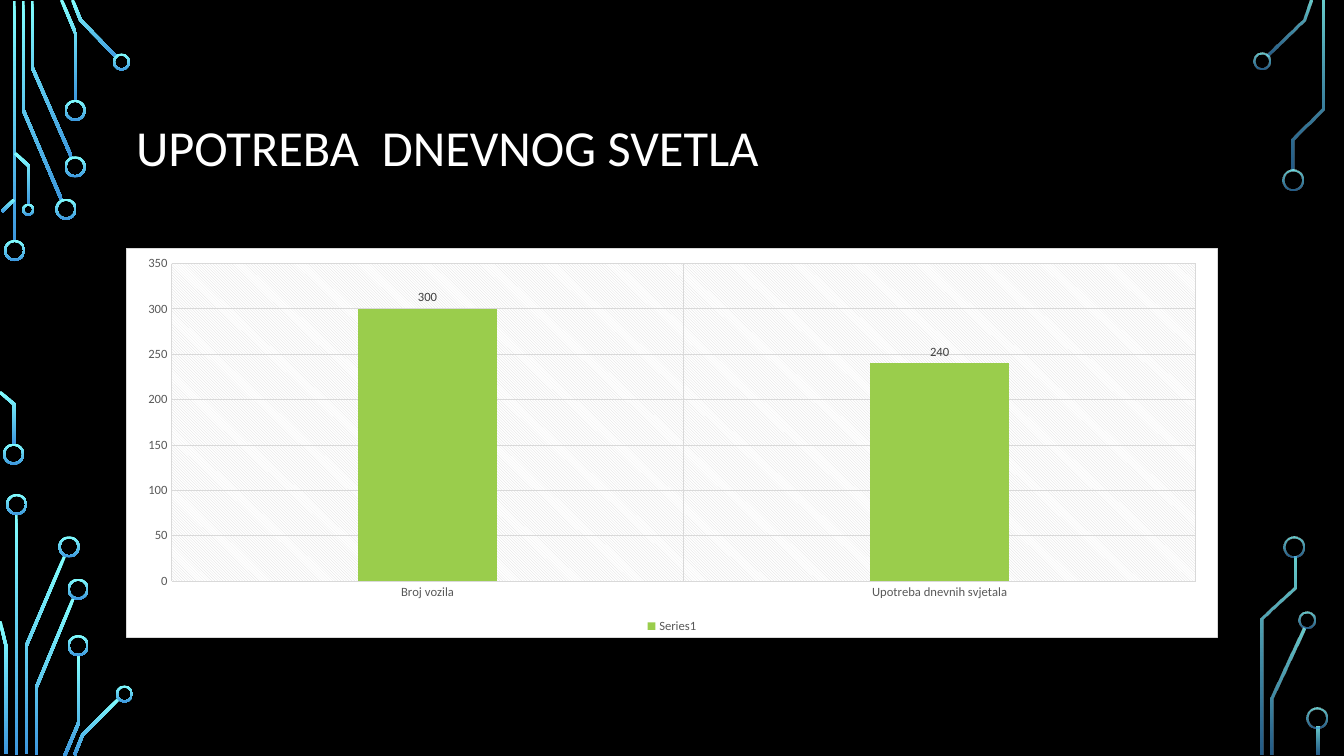
import math
from dataclasses import dataclass

import pptx
import pptx.chart.data
import pptx.dml.color
import pptx.enum.chart
import pptx.enum.shapes
import pptx.enum.text
import pptx.oxml
import pptx.oxml.ns
import pptx.util
from lxml import etree

PX = 9144
TRACE_WIDTH = 3
RING_WALL = 2
FONT = "Calibri"
COLORS = {
    "background": "000000",
    "white": "FFFFFF",
    "glow_top": "82FFFF",
    "glow_bottom": "3D97DE",
    "bar": "9ACD4C",
    "grid": "D9D9D9",
    "axis_text": "595959",
    "label_text": "404040",
}


@dataclass(frozen=True)
class Ring:
    left: int
    top: int
    size: int = 21


@dataclass(frozen=True)
class Trace:
    points: tuple[tuple[int, int], ...]


@dataclass(frozen=True)
class Circuit:
    traces: tuple[Trace, ...]
    rings: tuple[Ring, ...]
    alphas: tuple[int, int] = (100, 100)


LEFT_CIRCUIT = Circuit(
    traces=(
        Trace(((14, 1), (14, 240))),
        Trace(((23, 1), (23, 109), (61, 198))),
        Trace(((32, 1), (32, 67), (71, 156))),
        Trace(((61, 0), (75, 33), (75, 100))),
        Trace(((72, 0), (80, 20), (116, 57))),
        Trace(((14, 198), (2, 210))),
        Trace(((0, 389), (14, 401), (14, 441))),
        Trace(((15, 152), (29, 165), (29, 203))),
        Trace(((16, 510), (16, 749))),
        Trace(((64, 552), (26, 641), (26, 748))),
        Trace(((0, 616), (6, 641), (6, 748))),
        Trace(((73, 593), (36, 682), (36, 749))),
        Trace(((78, 650), (78, 717), (64, 750))),
        Trace(((118, 693), (82, 729), (74, 749))),
    ),
    rings=(
        Ring(4, 238), Ring(3, 440), Ring(55, 197), Ring(64, 155), Ring(64, 99),
        Ring(112, 53, 17), Ring(22, 202, 12), Ring(6, 490), Ring(58, 532),
        Ring(67, 574), Ring(67, 630), Ring(115, 680, 17),
    ),
)
RIGHT_CIRCUIT = Circuit(
    traces=(
        Trace(((1300, 0), (1293, 20), (1257, 55))),
        Trace(((1312, 1), (1312, 108), (1282, 138), (1282, 169))),
        Trace(((1293, 623), (1262, 693), (1262, 749))),
        Trace(((1284, 552), (1284, 583), (1252, 614), (1252, 749))),
        Trace(((1307, 721), (1307, 749))),
    ),
    rings=(
        Ring(1243, 52, 17), Ring(1272, 168), Ring(1288, 607, 17),
        Ring(1273, 532), Ring(1296, 702),
    ),
    alphas=(80, 60),
)


def rgb(name: str) -> pptx.dml.color.RGBColor:
    return pptx.dml.color.RGBColor.from_string(COLORS[name])


def style_font(font, size: float, color: str) -> None:
    font.name = FONT
    font.size = pptx.util.Pt(size)
    font.color.rgb = rgb(color)


def write_text(frame, text: str, *, size: float, color: str, spacing: float) -> None:
    frame.word_wrap = True
    frame.auto_size = pptx.enum.text.MSO_AUTO_SIZE.NONE
    frame.vertical_anchor = pptx.enum.text.MSO_ANCHOR.MIDDLE
    para = frame.paragraphs[0]
    para.alignment = pptx.enum.text.PP_ALIGN.LEFT
    para.line_spacing = spacing
    span = para.add_run()
    span.text = text
    style_font(span.font, size, color)


def apply_glow(shape, alphas: tuple[int, int]) -> None:
    shape.shadow.inherit = False
    shape.line.fill.background()
    shape.fill.gradient()
    shape.fill.gradient_angle = 270
    for stop, name in zip(shape.fill.gradient_stops, ("glow_top", "glow_bottom")):
        stop.color.rgb = rgb(name)
    qn = pptx.oxml.ns.qn
    for color, alpha in zip(shape._element.spPr.iter(qn("a:srgbClr")), alphas):
        if alpha < 100:
            etree.SubElement(color, qn("a:alpha")).set("val", str(alpha * 1000))


def ribbon_outline(trace: Trace) -> list[tuple[int, int]]:
    normals = []
    for (x1, y1), (x2, y2) in zip(trace.points, trace.points[1:]):
        length = math.hypot(x2 - x1, y2 - y1)
        normals.append(((y1 - y2) / length, (x2 - x1) / length))
    sides = ([], [])
    before_after = zip(normals[:1] + normals, normals + normals[-1:])
    for (x, y), (first, second) in zip(trace.points, before_after):
        reach = TRACE_WIDTH / 2 / (1 + first[0] * second[0] + first[1] * second[1])
        for side, sign in zip(sides, (1, -1)):
            side.append((
                round((x + sign * reach * (first[0] + second[0])) * PX),
                round((y + sign * reach * (first[1] + second[1])) * PX),
            ))
    return sides[0] + sides[1][::-1]


def draw_circuit(page, circuit: Circuit) -> None:
    group = page.shapes.add_group_shape()
    for trace in circuit.traces:
        start, *rest = ribbon_outline(trace)
        builder = group.shapes.build_freeform(*start, scale=1.0)
        builder.add_line_segments(rest, close=True)
        apply_glow(builder.convert_to_shape(), circuit.alphas)
    for ring in circuit.rings:
        shape = group.shapes.add_shape(
            pptx.enum.shapes.MSO_SHAPE.DONUT,
            ring.left * PX, ring.top * PX, ring.size * PX, ring.size * PX,
        )
        shape.adjustments[0] = RING_WALL / ring.size
        apply_glow(shape, circuit.alphas)


def area_properties(fill: str, line: str):
    return pptx.oxml.parse_xml(
        f'<c:spPr {pptx.oxml.ns.nsdecls("c", "a")}>{fill}'
        f'<a:ln w="9525">{line}</a:ln></c:spPr>'
    )


def solid(name: str) -> str:
    return f'<a:solidFill><a:srgbClr val="{COLORS[name]}"/></a:solidFill>'


def style_line(line, color: str) -> None:
    line.color.rgb = rgb(color)
    line.width = pptx.util.Pt(0.75)


def draw_chart(page) -> None:
    enums = pptx.enum.chart
    data = pptx.chart.data.CategoryChartData()
    data.categories = ["Broj vozila", "Upotreba dnevnih svjetala"]
    data.add_series("Series1", (300, 240))
    chart = page.shapes.add_chart(
        enums.XL_CHART_TYPE.COLUMN_CLUSTERED, 125 * PX, 246 * PX, 1083 * PX, 387 * PX, data
    ).chart
    chart.has_title = False
    style_font(chart.font, 10, "white")
    chart.has_legend = True
    chart.legend.position = enums.XL_LEGEND_POSITION.BOTTOM
    chart.legend.include_in_layout = False
    style_font(chart.legend.font, 9, "axis_text")

    for axis in (chart.category_axis, chart.value_axis):
        axis.major_tick_mark = axis.minor_tick_mark = enums.XL_TICK_MARK.NONE
        axis.has_major_gridlines = True
        style_line(axis.major_gridlines.format.line, "grid")
        style_font(axis.tick_labels.font, 9, "axis_text")
    style_line(chart.category_axis.format.line, "grid")
    chart.value_axis.format.line.fill.background()
    chart.value_axis.minimum_scale = 0
    chart.value_axis.maximum_scale = 350
    chart.value_axis.major_unit = 50

    plot = chart.plots[0]
    plot.vary_by_categories = False
    plot.gap_width = 267
    plot.overlap = -43
    series = plot.series[0]
    series.invert_if_negative = False
    series.format.fill.solid()
    series.format.fill.fore_color.rgb = rgb("bar")
    labels = series.data_labels
    labels.show_value = True
    labels.position = enums.XL_LABEL_POSITION.OUTSIDE_END
    style_font(labels.font, 9, "label_text")

    pattern = (
        f'<a:pattFill prst="ltDnDiag"><a:fgClr><a:srgbClr val="{COLORS["grid"]}"/></a:fgClr>'
        f'<a:bgClr><a:srgbClr val="{COLORS["white"]}"/></a:bgClr></a:pattFill>'
    )
    body = chart._chartSpace.chart
    body.plotArea.append(area_properties(pattern, "<a:noFill/>"))
    body.addnext(area_properties(solid("white"), solid("grid")))


def main() -> None:
    deck = pptx.Presentation()
    deck.slide_width = 1333 * PX
    deck.slide_height = 750 * PX
    page = deck.slides.add_slide(deck.slide_layouts.get_by_name("Title Only"))
    page.background.fill.solid()
    page.background.fill.fore_color.rgb = rgb("background")
    for circuit in (LEFT_CIRCUIT, RIGHT_CIRCUIT):
        draw_circuit(page, circuit)
    title = page.shapes.title
    title.left, title.top, title.width, title.height = (
        side * PX for side in (125, 68, 1083, 162)
    )
    write_text(title.text_frame, "UPOTREBA  DNEVNOG SVETLA", size=36, color="white", spacing=0.9)
    draw_chart(page)
    deck.save("out.pptx")


if __name__ == "__main__":
    main()
